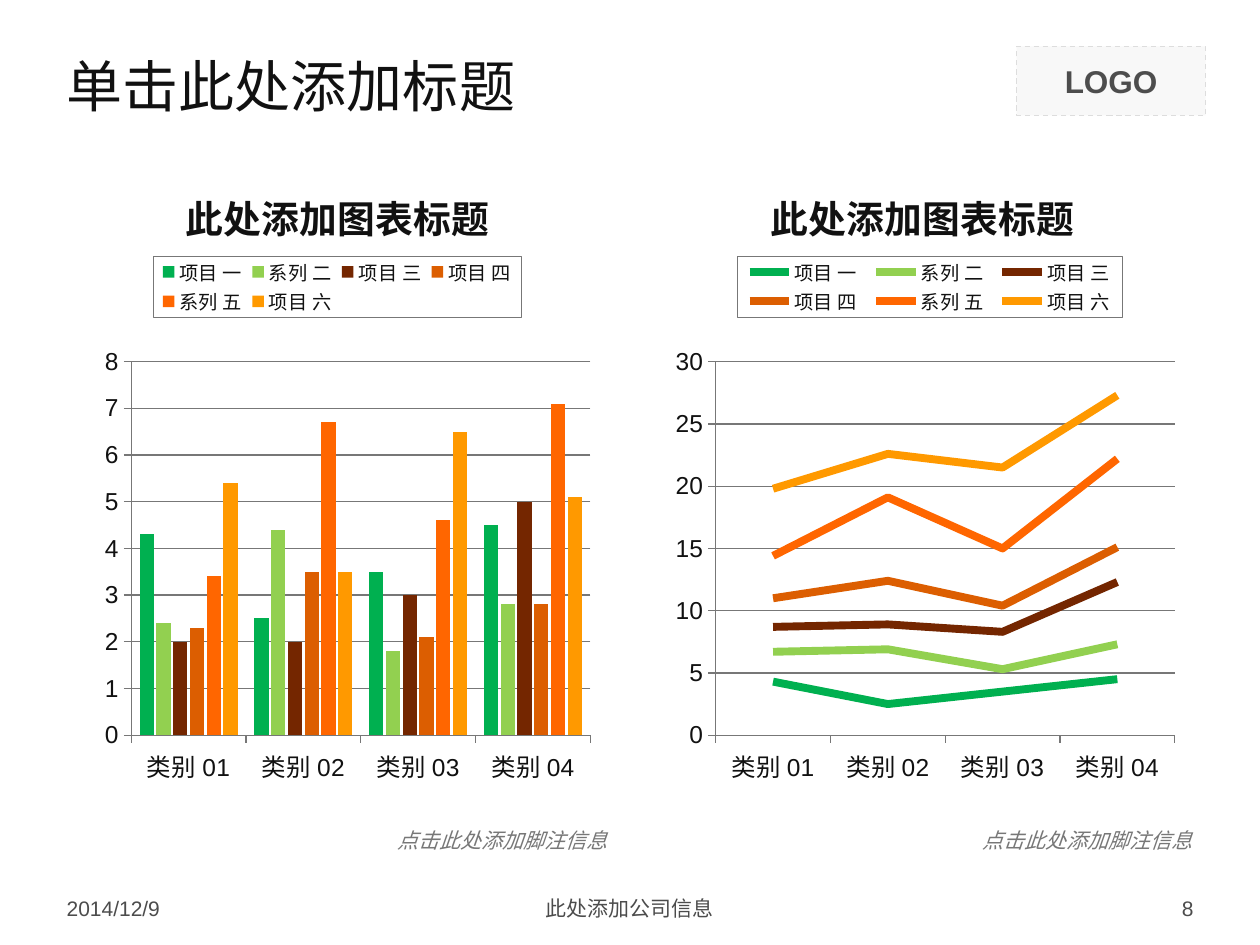
from lxml.etree import SubElement, Element
from pptx import Presentation
from pptx.chart.data import CategoryChartData
from pptx.dml.color import RGBColor
from pptx.enum.chart import XL_CHART_TYPE, XL_LEGEND_POSITION, XL_TICK_MARK
from pptx.enum.dml import MSO_LINE
from pptx.enum.shapes import MSO_SHAPE
from pptx.enum.text import MSO_ANCHOR, MSO_AUTO_SIZE, PP_ALIGN
from pptx.oxml.ns import qn
from pptx.util import Pt

# Content
TITLE = "单击此处添加标题"
CHART_TITLE = "此处添加图表标题"
FOOTNOTE = "点击此处添加脚注信息"
CATEGORIES = ["类别 01", "类别 02", "类别 03", "类别 04"]
SERIES = [
    ("项目 一", [4.3, 2.5, 3.5, 4.5], "00B050"),
    ("系列 二", [2.4, 4.4, 1.8, 2.8], "92D050"),
    ("项目 三", [2, 2, 3, 5], "742600"),
    ("项目 四", [2.3, 3.5, 2.1, 2.8], "DC5E01"),
    ("系列 五", [3.4, 6.7, 4.6, 7.1], "FF6600"),
    ("项目 六", [5.4, 3.5, 6.5, 5.1], "FF9900"),
]
CHARTS = [  # type, axis maximum, axis step, legend width
    (XL_CHART_TYPE.COLUMN_CLUSTERED, 8, 1, 0.65),
    (XL_CHART_TYPE.LINE_STACKED, 30, 5, 0.68),
]
FOOTER = [  # text, left, width, alignment
    ("2014/12/9", 31, 168, PP_ALIGN.LEFT),
    ("此处添加公司信息", 246, 228, PP_ALIGN.CENTER),
    ("8", 521, 168, PP_ALIGN.RIGHT),
]
THEME = dict(
    font="Arial", title_font="Montserrat",
    text="111111", line="777777", footer="4C4C4C",
    logo_text="4D4D4D", logo_fill="F8F8F8", logo_line="DDDDDD",
    title=32, chart_title=21.6, logo=18, chart=18, axis=14, small=12, legend=11,
)

# Geometry
MARGIN, CHART_W, CHART_GAP = 31, 323.5, 10.5
CHART_TOP, CHART_H = 94, 374.5
NOTE_W = 135.5


def rgb(key):
    return RGBColor.from_string(THEME[key])


def style_font(font, size, color, name="font", bold=None, italic=None):
    font.name, font.size, font.color.rgb = THEME[name], Pt(THEME[size]), rgb(color)
    font.bold, font.italic = bold, italic


def set_text(shape, text, align, size, color, anchor=MSO_ANCHOR.MIDDLE, **style):
    tf = shape.text_frame
    tf.text = text
    tf.word_wrap = True
    tf.vertical_anchor = anchor
    p = tf.paragraphs[0]
    p.alignment = align
    style_font(p.runs[0].font, size, color, **style)
    return tf


def set_layout(parent, index, inner=False, **place):
    """Place a chart part by fractions of the chart size."""
    for old in parent.findall(qn("c:layout")):
        parent.remove(old)
    layout = Element(qn("c:layout"))
    parent.insert(index, layout)
    manual = SubElement(layout, qn("c:manualLayout"))
    if inner:
        SubElement(manual, qn("c:layoutTarget")).set("val", "inner")
    for mode in ("xMode", "yMode"):
        SubElement(manual, qn(f"c:{mode}")).set("val", "edge")
    for key, value in place.items():
        SubElement(manual, qn(f"c:{key}")).set("val", str(value))


def outline_legend(legend):
    sp_pr = Element(qn("c:spPr"))
    ln = SubElement(sp_pr, qn("a:ln"), w=str(Pt(0.75)))
    fill = SubElement(ln, qn("a:solidFill"))
    SubElement(fill, qn("a:srgbClr"), val=THEME["line"])
    legend.find(qn("c:overlay")).addnext(sp_pr)


def set_line(line):
    line.color.rgb, line.width = rgb("line"), Pt(0.75)


def add_chart(s, left, kind, maximum, step, legend_w):
    data = CategoryChartData()
    data.categories = CATEGORIES
    for name, values, _ in SERIES:
        data.add_series(name, values)
    chart = s.shapes.add_chart(kind, Pt(left), Pt(CHART_TOP), Pt(CHART_W),
                               Pt(CHART_H), data).chart
    style_font(chart.font, "chart", "text")

    # Title and legend
    tf = chart.chart_title.text_frame
    tf.text = CHART_TITLE
    style_font(tf.paragraphs[0].runs[0].font, "chart_title", "text", bold=True)
    title_xml = chart.element.find(".//" + qn("c:title"))
    set_layout(title_xml, 1, x=0.22, y=0.02)
    chart.has_legend = True
    legend = chart.legend
    legend.position = XL_LEGEND_POSITION.TOP
    legend.include_in_layout = False
    style_font(legend.font, "legend", "text")
    legend_xml = chart.element.find(".//" + qn("c:legend"))
    set_layout(legend_xml, 1, x=0.175, y=0.14, w=legend_w, h=0.093)
    outline_legend(legend_xml)

    # Plot area and axes
    set_layout(chart.element.find(".//" + qn("c:plotArea")), 0, inner=True,
               x=0.136, y=0.301, w=0.811, h=0.57)
    for axis in (chart.category_axis, chart.value_axis):
        style_font(axis.tick_labels.font, "axis", "text")
        axis.major_tick_mark = XL_TICK_MARK.OUTSIDE
        axis.minor_tick_mark = XL_TICK_MARK.NONE
        set_line(axis.format.line)
    axis = chart.value_axis
    axis.minimum_scale, axis.maximum_scale, axis.major_unit = 0, maximum, step
    axis.has_major_gridlines = True
    set_line(axis.major_gridlines.format.line)

    # Series
    plot = chart.plots[0]
    plot.vary_by_categories = False
    columns = kind == XL_CHART_TYPE.COLUMN_CLUSTERED
    if columns:
        plot.gap_width, plot.overlap = 117, -18
    for series, (_, _, color) in zip(plot.series, SERIES):
        if columns:
            series.format.fill.solid()
            series.format.fill.fore_color.rgb = RGBColor.from_string(color)
        else:
            series.smooth = False
            series.format.line.color.rgb = RGBColor.from_string(color)
            series.format.line.width = Pt(4.5)


def main():
    prs = Presentation()
    prs.slide_width, prs.slide_height = Pt(720), Pt(540)
    s = prs.slides.add_slide(prs.slide_layouts[5])

    # Slide title
    title = s.shapes.title
    title.left, title.top, title.width, title.height = Pt(31), Pt(20), Pt(658), Pt(57)
    set_text(title, TITLE, PP_ALIGN.LEFT, "title", "text", name="title_font")

    # Logo placeholder
    logo = s.shapes.add_shape(MSO_SHAPE.RECTANGLE, Pt(581), Pt(26.5), Pt(108), Pt(39.5))
    logo.shadow.inherit = False
    logo.fill.solid()
    logo.fill.fore_color.rgb = rgb("logo_fill")
    logo.line.color.rgb, logo.line.width = rgb("logo_line"), Pt(0.75)
    logo.line.dash_style = MSO_LINE.DASH
    set_text(logo, "LOGO", PP_ALIGN.CENTER, "logo", "logo_text", bold=True)

    # Charts, each with a footnote at its right edge
    for i, settings in enumerate(CHARTS):
        left = MARGIN + i * (CHART_W + CHART_GAP)
        add_chart(s, left, *settings)
        note = s.shapes.add_textbox(Pt(left + CHART_W - NOTE_W), Pt(469.5),
                                    Pt(NOTE_W), Pt(21.5))
        tf = set_text(note, FOOTNOTE, PP_ALIGN.RIGHT, "small", "line",
                      anchor=MSO_ANCHOR.TOP, italic=True)
        tf.word_wrap = False
        tf.auto_size = MSO_AUTO_SIZE.SHAPE_TO_FIT_TEXT

    # Footer
    for text, left, width, align in FOOTER:
        box = s.shapes.add_textbox(Pt(left), Pt(508.5), Pt(width), Pt(21))
        set_text(box, text, align, "small", "footer")

    prs.save("out.pptx")


if __name__ == "__main__":
    main()
